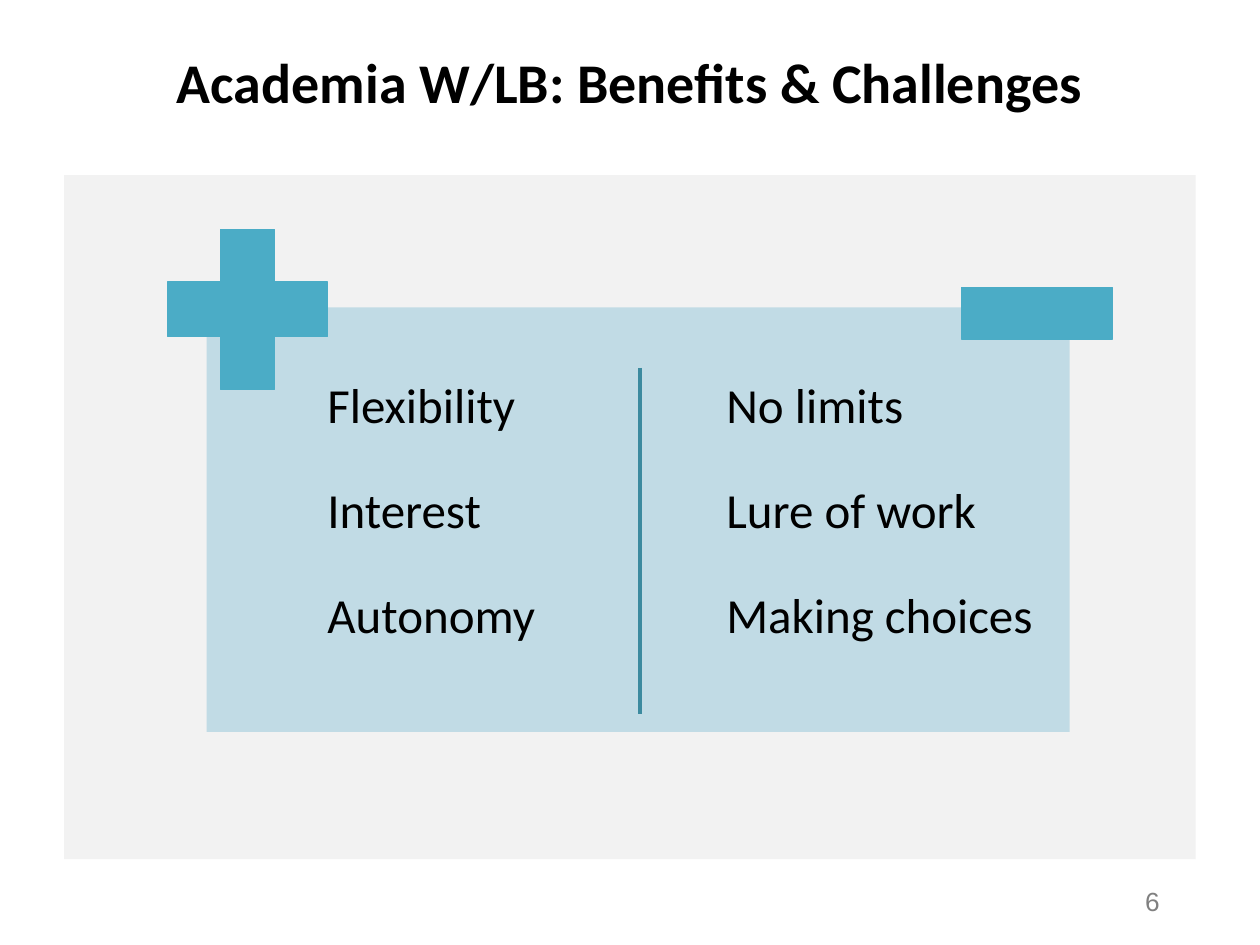
from lxml import etree
from pptx import Presentation, util as u
from pptx.dml.color import RGBColor
from pptx.enum import shapes, text
from pptx.oxml.ns import qn

WIDE, HIGH = u.Inches(10), u.Inches(7.5)
HUES = {"panel": "F2F2F2", "card": "C1DBE5", "sign": "4BACC6",
        "rule": "3C8A9F", "ink": "000000", "page": "808080"}
ITEMS = {25: ["Flexibility", "Interest", "Autonomy"],
         56.67: ["No limits", "Lure of work", "Making choices"]}
TOP, STEP = 38.93, 100 / 9


def hue(name):
    """Return the named colour."""
    return RGBColor.from_string(HUES[name])


def area(left, top, width, height):
    """Turn percentages of the slide into lengths."""
    return [round(side * part / 100) for side, part in
            zip((WIDE, HIGH, WIDE, HIGH), (left, top, width, height))]


def block(home, kind, box, fill, edge=False):
    """Add a filled shape, with an edge of its own colour if asked."""
    shape = home.add_shape(kind, *area(*box))
    shape.shadow.inherit = False
    shape.fill.solid()
    shape.fill.fore_color.rgb = hue(fill)
    if edge:
        shape.line.color.rgb = hue(fill)
        shape.line.width = u.Pt(0.75)
    else:
        shape.line.fill.background()
    return shape


def rule(home, left, top, drop):
    """Add the vertical divider."""
    x, y, _, fall = area(left, top, 0, drop)
    line = home.add_connector(shapes.MSO_CONNECTOR.STRAIGHT, x, y, x, y + fall)
    line.line.color.rgb = hue("rule")
    line.line.width = u.Pt(2)
    etree.SubElement(line._element.spPr, qn("a:effectLst"))


def style(frame, words, size, ink="ink", face="Calibri", bold=False):
    """Fill a text frame with one formatted paragraph."""
    frame.text = words
    para = frame.paragraphs[0]
    font = para.font
    font.name, font.size, font.bold = face, u.Pt(size), bold
    font.color.rgb = hue(ink)
    return para


def label(home, box, words, size, wrap=True, **looks):
    """Add a text box that fits its text."""
    frame = home.add_textbox(*area(*box)).text_frame
    frame.word_wrap = wrap
    frame.auto_size = text.MSO_AUTO_SIZE.SHAPE_TO_FIT_TEXT
    style(frame, words, size, **looks)


def head(slide, words):
    """Place and format the title."""
    title = slide.shapes.title
    title.left, title.top, title.width, title.height = area(5, 4, 90, 9.2)
    frame = title.text_frame
    frame.vertical_anchor = text.MSO_ANCHOR.MIDDLE
    style(frame, words, 32, bold=True).alignment = text.PP_ALIGN.CENTER


def scale(home):
    """Draw the card with its plus, minus and divider."""
    kind = shapes.MSO_SHAPE
    block(home, kind.RECTANGLE, (16.4, 32.53, 68.5, 44.93), "card")
    plus = block(home, kind.CROSS, (13.3, 24.27, 12.7, 16.93), "sign", True)
    plus.adjustments[0] = 0.33
    block(home, kind.RECTANGLE, (76.3, 30.4, 12, 5.47), "sign", True)
    rule(home, 50.8, TOP, 36.67)


def main():
    """Build and save the slide."""
    deck = Presentation()
    deck.slide_width, deck.slide_height = WIDE, HIGH
    slide = deck.slides.add_slide(deck.slide_layouts[5])
    home = slide.shapes
    block(home, shapes.MSO_SHAPE.RECTANGLE, (5.1, 18.53, 89.8, 72.4), "panel")
    label(home, (89.9, 93.07, 4.6, 4.67), "6", 15, wrap=False,
          ink="page", face="Arial")
    head(slide, "Academia W/LB: Benefits & Challenges")
    scale(home.add_group_shape().shapes)
    for left, words in ITEMS.items():
        for row, word in enumerate(words):
            label(home, (left, TOP + row * STEP, 27.5, 7.6), word, 28)
    deck.save("out.pptx")


if __name__ == "__main__":
    main()
